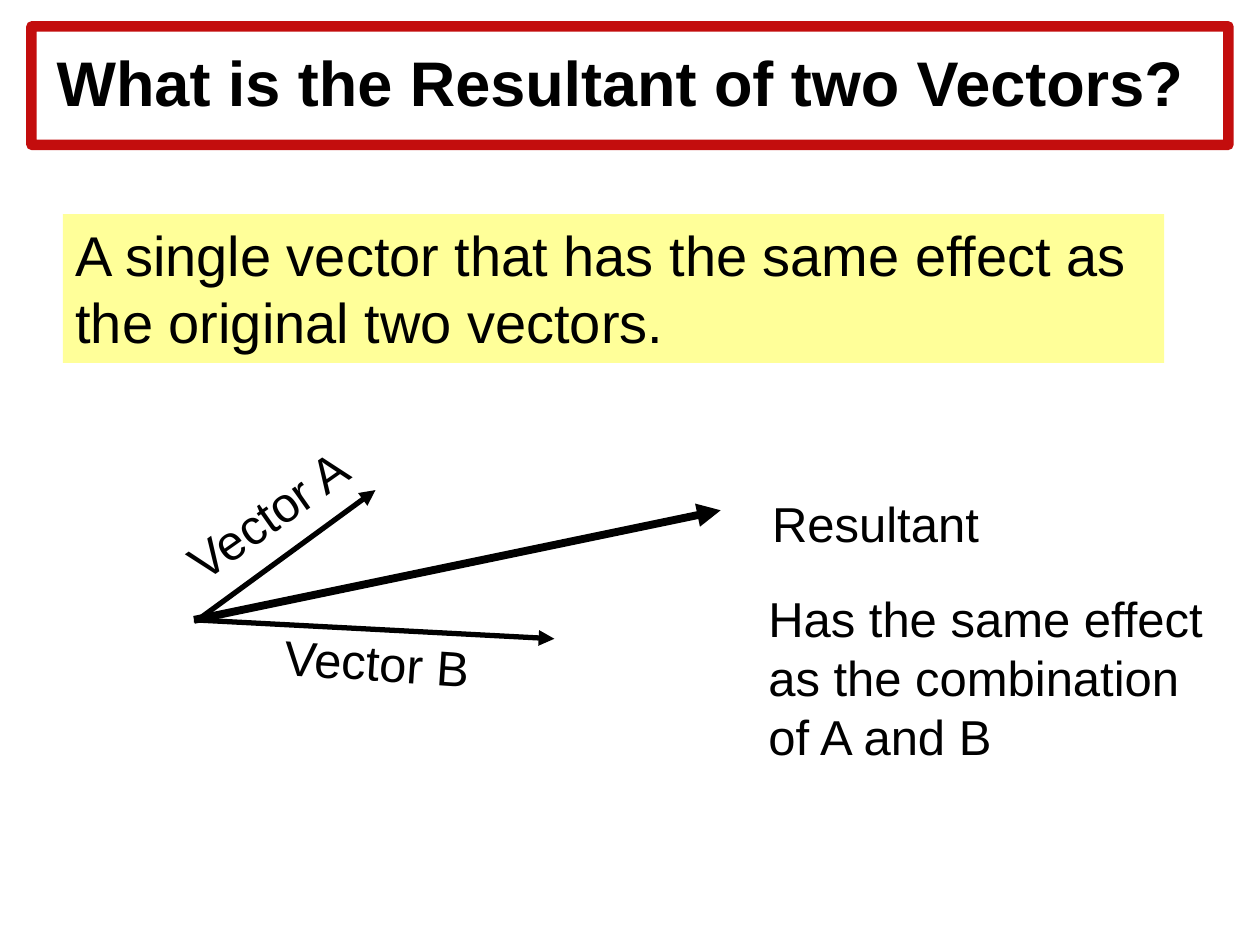
from dataclasses import dataclass
from typing import Optional

from lxml.etree import SubElement
from pptx import Presentation
from pptx.dml.color import RGBColor
from pptx.enum.shapes import MSO_CONNECTOR, MSO_SHAPE
from pptx.enum.text import MSO_ANCHOR, MSO_AUTO_SIZE, PP_ALIGN
from pptx.oxml.ns import qn
from pptx.util import Inches, Pt

COLORS = {"text": "000000", "frame": "C00000", "panel": "FFFF99"}
FONT = "Arial"
COLUMNS, ROWS = 100, 75
CELL = Inches(0.1)
FRAME_OPACITY = 95


@dataclass(frozen=True)
class Area:
    column: float
    row: float
    columns: float
    rows: float


@dataclass(frozen=True)
class Panel:
    area: Area
    text: str
    size: float
    bold: bool = False
    fill: Optional[str] = None
    border: Optional[str] = None
    inset: float = 0.1
    inset_vertical: float = 0.05
    line_spacing: float = 1.0
    space_before: float = 0


@dataclass(frozen=True)
class Label:
    area: Area
    text: str
    wrap: bool = True
    rotation: float = 0


@dataclass(frozen=True)
class Vector:
    start: tuple[float, float]
    end: tuple[float, float]
    weight: float


PANELS = [
    Panel(Area(2.5, 2.1, 95, 9.4), "What is the Resultant of two Vectors?", 36,
          bold=True, border="frame", inset=0.2, inset_vertical=0.2, line_spacing=0.9),
    Panel(Area(5, 17, 87.4, 11.8),
          "A single vector that has the same effect as the original two vectors.", 32,
          fill="panel", space_before=6.4),
]

VECTORS = [
    Vector((15.7, 49.2), (29.8, 38.9), 3),
    Vector((15.4, 49.2), (44, 50.7), 3),
    Vector((15.4, 49.2), (57.2, 40.5), 4.5),
]

LABELS = [
    Label(Area(60.3, 38.7, 19.7, 5.7), "Resultant", wrap=False),
    Label(Area(12.8, 37.2, 19.1, 5.7), "Vector A", rotation=324.9),
    Label(Area(21.6, 49.7, 16.9, 5.7), "Vector B", wrap=False, rotation=3.8),
    Label(Area(60, 46.2, 36.6, 15.1), "Has the same effect as the combination of A and B"),
]


def color(name: str) -> RGBColor:
    return RGBColor.from_string(COLORS[name])


def cells(*counts: float) -> list[int]:
    return [round(count * CELL) for count in counts]


def place(area: Area) -> list[int]:
    return cells(area.column, area.row, area.columns, area.rows)


def write(box, text: str, size: float, bold: bool = False, wrap: bool = True):
    frame = box.text_frame
    frame.word_wrap = wrap
    frame.auto_size = MSO_AUTO_SIZE.SHAPE_TO_FIT_TEXT
    frame.vertical_anchor = MSO_ANCHOR.TOP
    para = frame.paragraphs[0]
    para.text = text
    para.alignment = PP_ALIGN.LEFT
    para.font.name = FONT
    para.font.size = Pt(size)
    para.font.bold = bold
    para.font.color.rgb = color("text")
    return para


def draw_panel(page, panel: Panel) -> None:
    box = page.shapes.add_shape(MSO_SHAPE.RECTANGLE, *place(panel.area))
    box.shadow.inherit = False
    if panel.fill:
        box.fill.solid()
        box.fill.fore_color.rgb = color(panel.fill)
    else:
        box.fill.background()
    if panel.border:
        box.line.color.rgb = color(panel.border)
        box.line.width = Pt(6)
        outline = box.line._get_or_add_ln()
        tint = outline.find(qn("a:solidFill")).find(qn("a:srgbClr"))
        SubElement(tint, qn("a:alpha"), val=str(FRAME_OPACITY * 1000))
        SubElement(outline, qn("a:round"))
    else:
        box.line.fill.background()
    para = write(box, panel.text, panel.size, panel.bold)
    para.line_spacing = panel.line_spacing
    para.space_before = Pt(panel.space_before)
    frame = box.text_frame
    frame.margin_left = frame.margin_right = Inches(panel.inset)
    frame.margin_top = frame.margin_bottom = Inches(panel.inset_vertical)


def draw_vector(page, vector: Vector) -> None:
    arrow = page.shapes.add_connector(
        MSO_CONNECTOR.STRAIGHT, *cells(*vector.start, *vector.end))
    arrow.line.color.rgb = color("text")
    arrow.line.width = Pt(vector.weight)
    SubElement(arrow.line._get_or_add_ln(), qn("a:tailEnd"), type="triangle")
    SubElement(arrow._element.spPr, qn("a:effectLst"))


def draw_label(page, label: Label) -> None:
    box = page.shapes.add_textbox(*place(label.area))
    box.rotation = label.rotation
    write(box, label.text, 28, wrap=label.wrap)


def main() -> None:
    deck = Presentation()
    deck.slide_width, deck.slide_height = cells(COLUMNS, ROWS)
    page = deck.slides.add_slide(deck.slide_layouts[6])
    for panel in PANELS:
        draw_panel(page, panel)
    for vector in VECTORS:
        draw_vector(page, vector)
    for label in LABELS:
        draw_label(page, label)
    deck.save("out.pptx")


if __name__ == "__main__":
    main()
